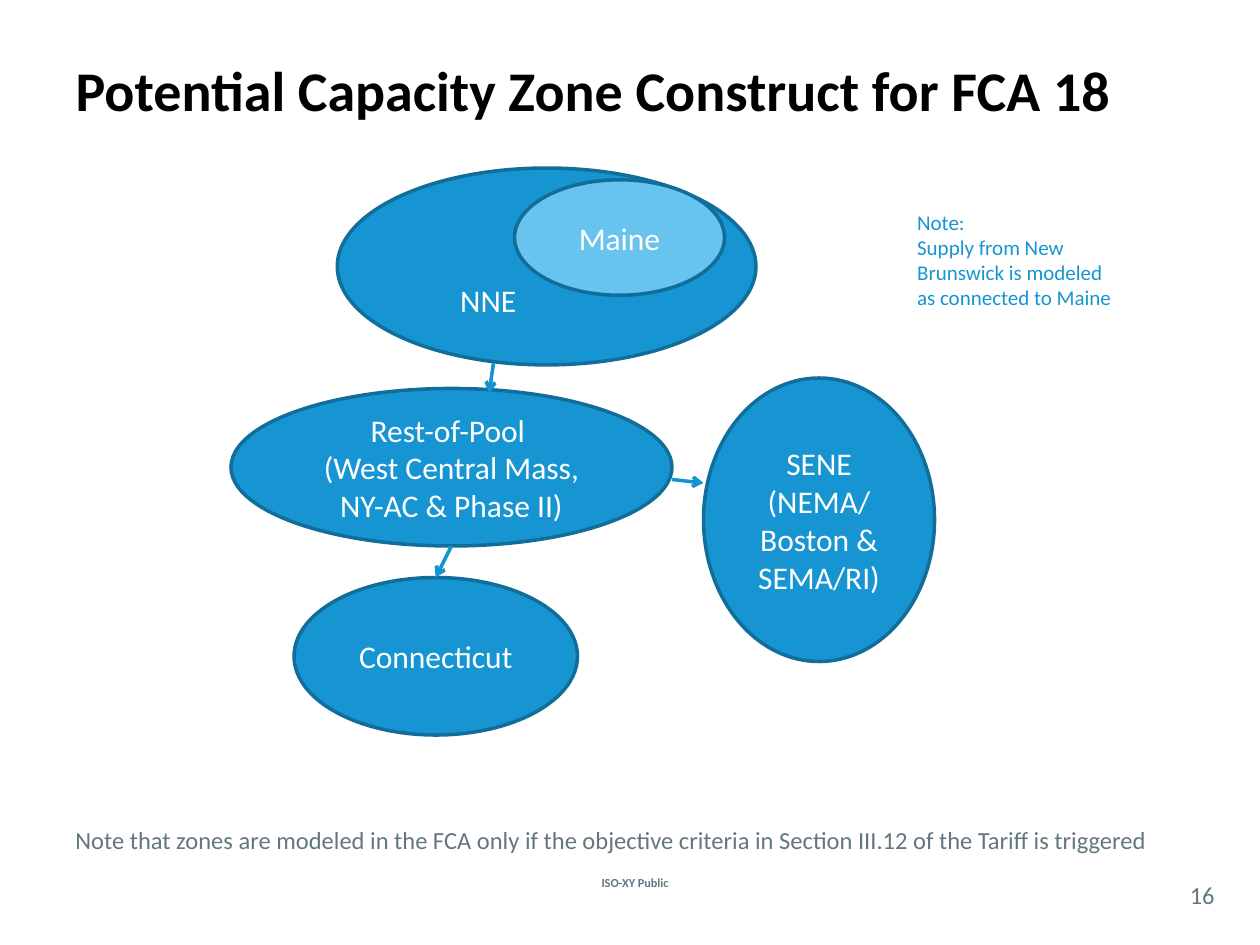
"""Build the capacity zone construct slide."""
import pptx
import pptx.util
import pptx.dml.color
import pptx.enum.shapes
import pptx.enum.text
import pptx.oxml.ns
import lxml.etree

Pt = pptx.util.Pt
Align = pptx.enum.text.PP_ALIGN
Anchor = pptx.enum.text.MSO_ANCHOR
COLORS = {
    "zone": "1795D2", "subzone": "69C3EF", "outline": "116E9B",
    "flow": "1293D2", "gray": "62777F", "white": "FFFFFF", "black": "000000",
}


def rgb(name):
    return pptx.dml.color.RGBColor.from_string(COLORS[name])


def write(shape, text, size, color, align=Align.LEFT, anchor=Anchor.TOP, bold=False, wrap=True):
    frame = shape.text_frame
    frame.auto_size = pptx.enum.text.MSO_AUTO_SIZE.NONE
    frame.word_wrap = wrap
    frame.vertical_anchor = anchor
    frame.text = text
    for paragraph in frame.paragraphs:
        paragraph.alignment = align
        for run in paragraph.runs:
            run.font.name = "Calibri"
            run.font.size = Pt(size)
            run.font.bold = bold
            run.font.color.rgb = rgb(color)


deck = pptx.Presentation()
deck.slide_width, deck.slide_height = Pt(720), Pt(540)
slide = deck.slides.add_slide(deck.slide_layouts[5])
shapes = slide.shapes

title = shapes.title
title.left, title.top, title.width, title.height = Pt(36), Pt(6), Pt(648), Pt(90)
write(title, "Potential Capacity Zone Construct for FCA 18", 32, "black",
      anchor=Anchor.MIDDLE, bold=True)

zones = [
    ("", "zone", 192.75, 96, 239.25, 112.5),
    ("Rest-of-Pool \v(West Central Mass, NY-AC & Phase II)", "zone", 132, 222, 252, 90),
    ("SENE (NEMA/\nBoston & SEMA/RI)", "zone", 402, 216, 132, 162),
    ("Connecticut", "zone", 168, 330, 162, 90),
    ("Maine", "subzone", 294, 102.75, 120, 66),
]
for label, fill, left, top, width, height in zones:
    zone = shapes.add_shape(pptx.enum.shapes.MSO_SHAPE.OVAL,
                            Pt(left), Pt(top), Pt(width), Pt(height))
    zone.shadow.inherit = False
    zone.fill.solid()
    zone.fill.fore_color.rgb = rgb(fill)
    zone.line.color.rgb = rgb("outline")
    zone.line.width = Pt(2)
    if label:
        write(zone, label, 18, "white", Align.CENTER, Anchor.MIDDLE)

flows = [
    (282, 207.5, 279.5, 224.5),
    (384, 274, 402, 276),
    (258, 312, 249, 330),
]
for ends in flows:
    flow = shapes.add_connector(pptx.enum.shapes.MSO_CONNECTOR.STRAIGHT, *map(Pt, ends))
    flow.line.color.rgb = rgb("flow")
    flow.line.width = Pt(2)
    lxml.etree.SubElement(flow.line._get_or_add_ln(), pptx.oxml.ns.qn("a:tailEnd"), type="arrow")
    lxml.etree.SubElement(flow._element.spPr, pptx.oxml.ns.qn("a:effectLst"))

tariff_note = shapes.add_textbox(Pt(36), Pt(468), Pt(633), Pt(24.25))
write(tariff_note, "Note that zones are modeled in the FCA only if the objective criteria "
      "in Section III.12 of the Tariff is triggered", 14, "gray", wrap=False)

nne = shapes.add_textbox(Pt(253.5), Pt(157), Pt(51), Pt(30))
write(nne, "NNE", 18, "white", Align.CENTER)

supply_note = shapes.add_textbox(Pt(517), Pt(116), Pt(128), Pt(65.5))
write(supply_note, "Note:\nSupply from New\nBrunswick is modeled\nas connected to Maine",
      12, "zone", wrap=False)

footer = shapes.add_textbox(Pt(293.75), Pt(498), Pt(138.25), Pt(12.25))
write(footer, "ISO-XY Public", 7, "gray", Align.CENTER, Anchor.MIDDLE, bold=True)

page_number = shapes.add_textbox(Pt(672), Pt(501), Pt(30), Pt(21))
write(page_number, "16", 14, "gray", Align.CENTER, Anchor.MIDDLE)
for side in ("left", "top", "right", "bottom"):
    setattr(page_number.text_frame, f"margin_{side}", 0)

deck.save("out.pptx")
